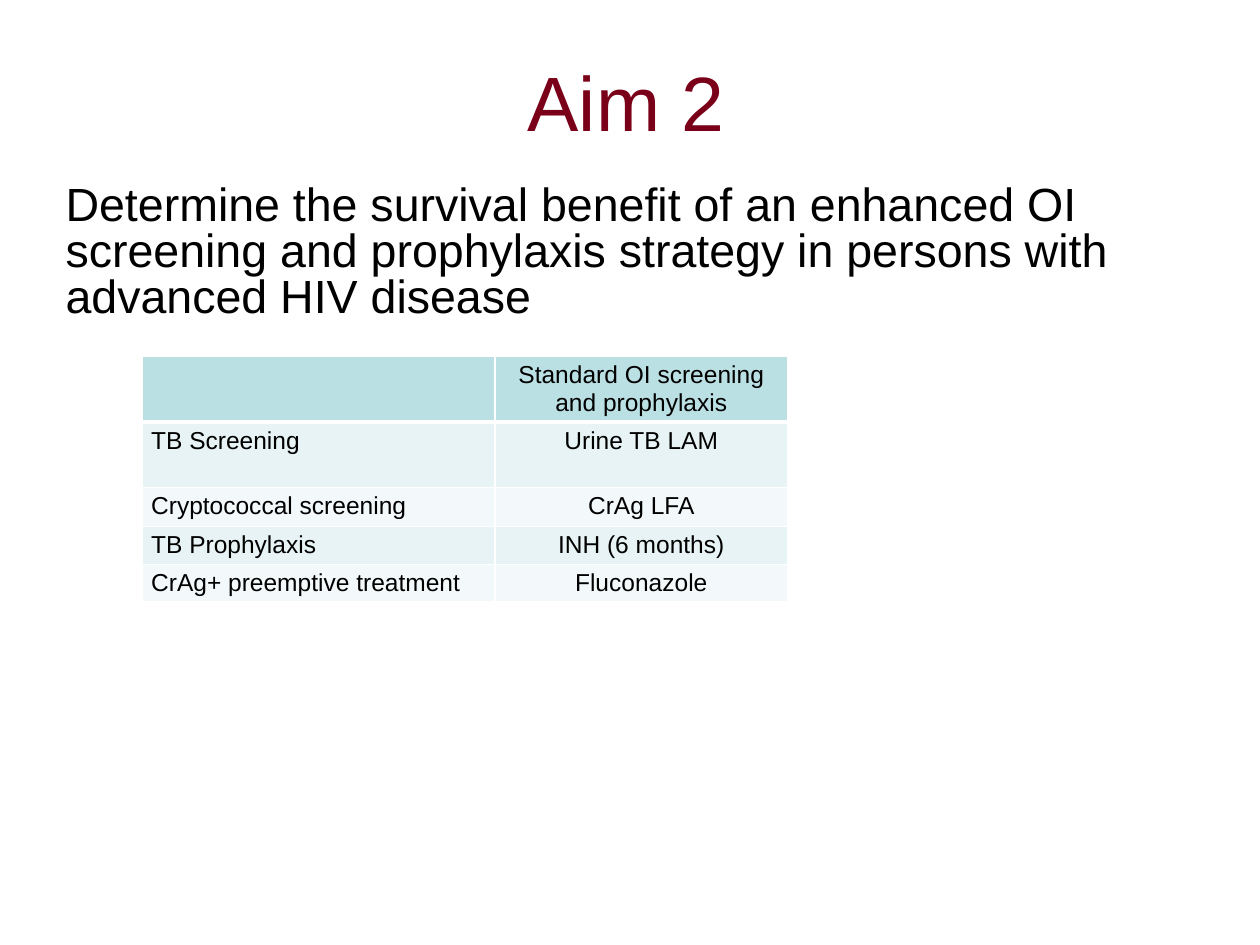
from lxml import etree
from pptx import Presentation
from pptx.dml.color import RGBColor
from pptx.enum import text
from pptx.oxml import ns
from pptx.util import Inches, Pt

FONT = "Arial"
COLORS = {
    "title": "7A0019",
    "text": "000000",
    "border": "FFFFFF",
    "header": "BBE0E3",
    "odd_row": "E7F3F4",
    "even_row": "F3F9FA",
}
ROWS = [
    ("", "Standard OI screening and prophylaxis"),
    ("TB Screening", "Urine TB LAM"),
    ("Cryptococcal screening", "CrAg LFA"),
    ("TB Prophylaxis", "INH (6 months)"),
    ("CrAg+ preemptive treatment", "Fluconazole"),
]
COLUMN_WIDTHS = [2.8, 2.32]
ROW_HEIGHTS = [0.52, 0.52, 0.31, 0.3, 0.29]


def add_run(paragraph, words, size, color):
    run = paragraph.add_run()
    run.text = words
    run.font.name = FONT
    run.font.size = Pt(size)
    run.font.color.rgb = RGBColor.from_string(COLORS[color])


def place(shape, box):
    shape.left, shape.top, shape.width, shape.height = map(Inches, box)


def fill_title(title, box):
    place(title, box)
    frame = title.text_frame
    frame.auto_size = text.MSO_AUTO_SIZE.NONE
    frame.vertical_anchor = text.MSO_ANCHOR.MIDDLE
    paragraph = frame.paragraphs[0]
    paragraph.alignment = text.PP_ALIGN.CENTER
    add_run(paragraph, "Aim 2", 44, "title")


def fill_body(body, box):
    place(body, box)
    frame = body.text_frame
    frame.auto_size = text.MSO_AUTO_SIZE.NONE
    frame.vertical_anchor = text.MSO_ANCHOR.TOP
    paragraph = frame.paragraphs[0]
    properties = paragraph._p.get_or_add_pPr()
    properties.set("marL", "0")
    properties.set("indent", "0")
    etree.SubElement(properties, ns.qn("a:buNone"))
    paragraph.line_spacing = 0.83
    paragraph.space_before = Pt(0)
    add_run(paragraph, "Determine the survival benefit of an enhanced OI screening and "
            "prophylaxis strategy in persons with advanced HIV disease", 26.6, "text")


def set_borders(cell, widths):
    """Draw the left, right, top and bottom borders, with widths in points."""
    properties = cell._tc.get_or_add_tcPr()
    for index, (side, width) in enumerate(zip("LRTB", widths)):
        line = etree.Element(ns.qn(f"a:ln{side}"), w=str(Pt(width)))
        fill = etree.SubElement(line, ns.qn("a:solidFill"))
        etree.SubElement(fill, ns.qn("a:srgbClr"), val=COLORS["border"])
        properties.insert(index, line)


def fill_cell(cell, words, row, column):
    cell.margin_left = cell.margin_right = Inches(0.07)
    cell.margin_top = cell.margin_bottom = Inches(0.04)
    color = "header" if row == 0 else "odd_row" if row % 2 else "even_row"
    cell.fill.solid()
    cell.fill.fore_color.rgb = RGBColor.from_string(COLORS[color])
    set_borders(cell, (1, 1, 3 if row == 1 else 1, 3 if row == 0 else 1))
    if words:
        paragraph = cell.text_frame.paragraphs[0]
        paragraph.alignment = text.PP_ALIGN.CENTER if column else text.PP_ALIGN.LEFT
        add_run(paragraph, words, 14, "text")
        paragraph.runs[0].font.bold = False


def add_strategy_table(slide, left, top):
    table = slide.shapes.add_table(
        len(ROWS), len(COLUMN_WIDTHS), Inches(left), Inches(top),
        Inches(sum(COLUMN_WIDTHS)), Inches(sum(ROW_HEIGHTS))).table
    for column, width in zip(table.columns, COLUMN_WIDTHS):
        column.width = Inches(width)
    for row, height in zip(table.rows, ROW_HEIGHTS):
        row.height = Inches(height)
    for row, entries in enumerate(ROWS):
        for column, words in enumerate(entries):
            fill_cell(table.cell(row, column), words, row, column)


def main():
    presentation = Presentation()
    presentation.slide_width = Inches(10)
    presentation.slide_height = Inches(7.5)
    slide = presentation.slides.add_slide(presentation.slide_layouts[1])
    fill_title(slide.shapes.title, (0.72, 0.33, 8.5, 0.94))
    fill_body(slide.placeholders[1], (0.42, 1.41, 9.37, 4.69))
    add_strategy_table(slide, 1.13, 2.83)
    presentation.save("out.pptx")


if __name__ == "__main__":
    main()
